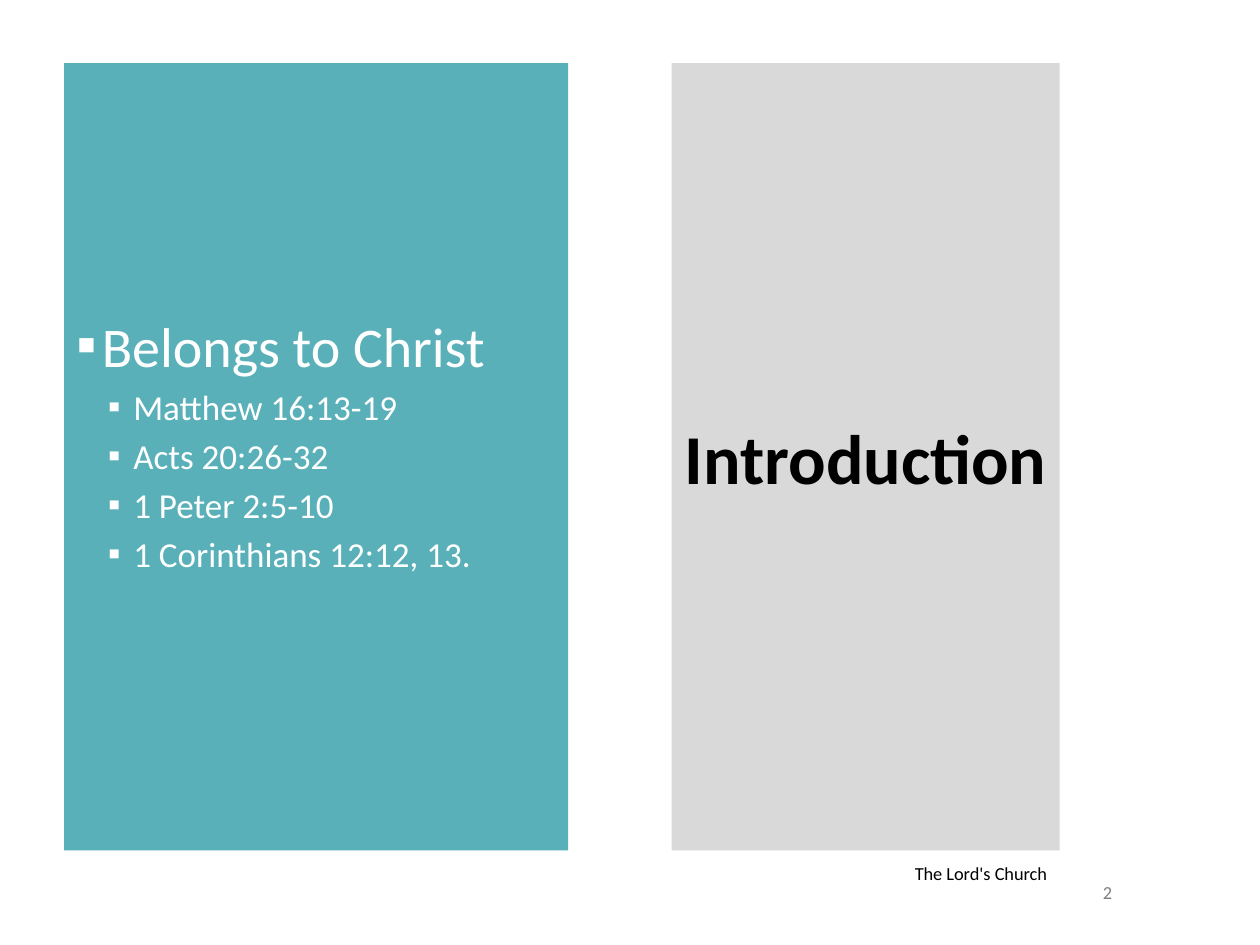
from dataclasses import dataclass
from lxml.etree import SubElement
from pptx import Presentation
from pptx.dml.color import RGBColor
from pptx.enum.shapes import MSO_SHAPE
from pptx.enum.text import MSO_ANCHOR, MSO_AUTO_SIZE, PP_ALIGN
from pptx.oxml.ns import qn
from pptx.util import Inches, Pt


@dataclass(frozen=True)
class Theme:
    font: str = "Calibri"
    teal: str = "59B0B9"
    pale: str = "D9D9D9"
    white: str = "FFFFFF"
    black: str = "000000"
    gray: str = "808080"
    title: float = 40
    head: float = 32
    item: float = 20
    small: float = 10.5


def write(para, text, font, size, color, bold=False, align=PP_ALIGN.LEFT):
    para.alignment = align
    run = para.add_run()
    run.text = text
    face = run.font
    face.name, face.size, face.bold = font, Pt(size), bold
    face.color.rgb = RGBColor.from_string(color)


class Page:
    def __init__(self, deck, theme):
        self.wide, self.high = deck.slide_width, deck.slide_height
        self.theme = theme
        self.slide = deck.slides.add_slide(deck.slide_layouts[5])

    def area(self, left, top, width, height):
        return (round(left * self.wide), round(top * self.high),
                round(width * self.wide), round(height * self.high))

    def frame(self, shape, anchor):
        frame = shape.text_frame
        frame.word_wrap = True
        frame.auto_size = MSO_AUTO_SIZE.NONE
        frame.vertical_anchor = anchor
        frame.margin_left = frame.margin_right = Inches(0.1)
        frame.margin_top = frame.margin_bottom = Inches(0.05)
        return frame

    def paint(self, shape, color):
        shape.fill.solid()
        shape.fill.fore_color.rgb = RGBColor.from_string(color)

    def title(self, text, area):
        shape = self.slide.shapes.title
        shape.left, shape.top, shape.width, shape.height = self.area(*area)
        self.paint(shape, self.theme.pale)
        frame = self.frame(shape, MSO_ANCHOR.MIDDLE)
        write(frame.paragraphs[0], text, self.theme.font, self.theme.title,
              self.theme.black, bold=True, align=PP_ALIGN.CENTER)

    def panel(self, head, items, area):
        shape = self.slide.shapes.add_shape(MSO_SHAPE.RECTANGLE, *self.area(*area))
        shape.shadow.inherit = False
        shape.line.fill.background()
        self.paint(shape, self.theme.teal)
        frame = self.frame(shape, MSO_ANCHOR.MIDDLE)
        frame.margin_bottom = Inches(0.27)
        self.bullet(frame.paragraphs[0], head, self.theme.head, 0)
        for item in items:
            para = frame.add_paragraph()
            para.space_before = Pt(self.theme.item * 0.2)
            self.bullet(para, item, self.theme.item, 1)

    def bullet(self, para, text, size, level):
        para.level = level
        props = para._p.get_or_add_pPr()
        props.set("marL", str(Inches(0.2 + 0.25 * level)))
        props.set("indent", str(Inches(-0.2)))
        tint = SubElement(props, qn("a:buClr"))
        SubElement(tint, qn("a:srgbClr"), val=self.theme.white)
        SubElement(props, qn("a:buFont"), typeface=self.theme.font)
        SubElement(props, qn("a:buChar"), char="▪")
        write(para, text, self.theme.font, size, self.theme.white)

    def note(self, text, area, color, align, anchor):
        shape = self.slide.shapes.add_textbox(*self.area(*area))
        frame = self.frame(shape, anchor)
        write(frame.paragraphs[0], text, self.theme.font, self.theme.small,
              color, align=align)


def main():
    deck = Presentation()
    deck.slide_width, deck.slide_height = Inches(10), Inches(7.5)
    theme = Theme()
    page = Page(deck, theme)
    top, tall = 1 / 15, 5 / 6
    left, width = 0.533, 0.308
    page.panel("Belongs to Christ",
               ["Matthew 16:13-19", "Acts 20:26-32", "1 Peter 2:5-10",
                "1 Corinthians 12:12, 13."],
               (0.051, top, 0.4, tall))
    page.title("Introduction", (left, top, width, tall))
    page.note("2", (0.85, 0.933, 0.058, 0.023), theme.gray,
              PP_ALIGN.CENTER, MSO_ANCHOR.MIDDLE)
    page.note("The Lord's Church", (left, 0.919, width, 0.023), theme.black,
              PP_ALIGN.RIGHT, MSO_ANCHOR.BOTTOM)
    deck.save("out.pptx")


if __name__ == "__main__":
    main()
